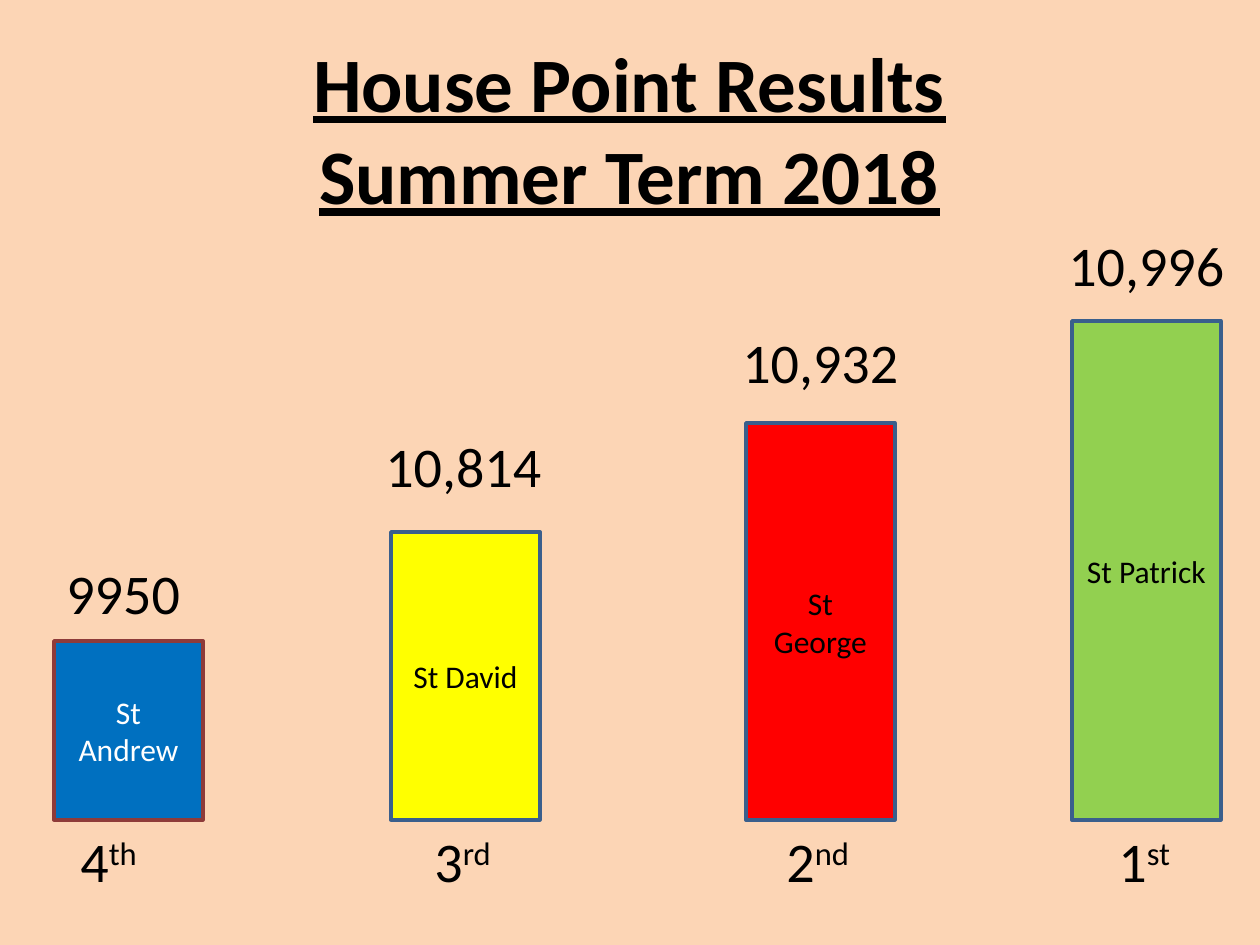
from pptx import Presentation
from pptx.dml.color import RGBColor
from pptx.enum.shapes import MSO_SHAPE
from pptx.enum.text import MSO_ANCHOR, MSO_AUTO_SIZE, PP_ALIGN
from pptx.util import Emu, Pt

PX = 914400 // 126
FONT = "Calibri"
BAR_WIDTH, BASELINE, LABEL_HEIGHT = 149, 820, 81

PEACH = RGBColor(0xFC, 0xD5, 0xB5)
BLACK = RGBColor(0x00, 0x00, 0x00)
WHITE = RGBColor(0xFF, 0xFF, 0xFF)
BLUE = RGBColor(0x00, 0x70, 0xC0)
YELLOW = RGBColor(0xFF, 0xFF, 0x00)
RED = RGBColor(0xFF, 0x00, 0x00)
GREEN = RGBColor(0x92, 0xD0, 0x50)
MAROON = RGBColor(0x8E, 0x3B, 0x39)
NAVY = RGBColor(0x3A, 0x5F, 0x8C)

# house, fill, line, text colour, bar (left, top), points, points (left, top, width), rank, suffix, rank (left, width)
HOUSES = [
    ("St Andrew", BLUE, MAROON, WHITE, (54, 641), "9950", (54, 552, 140), "4", "th", (68, 87)),
    ("St David", YELLOW, NAVY, BLACK, (391, 532), "10,814", (373, 425, 183), "3", "rd", (422, 87)),
    ("St George", RED, NAVY, BLACK, (746, 423), "10,932", (730, 321, 183), "2", "nd", (774, 95)),
    ("St Patrick", GREEN, NAVY, BLACK, (1072, 321), "10,996", (1056, 224, 183), "1", "st", (1106, 81)),
]


def px(*lengths):
    """Turn pixel lengths into EMU."""
    return [Emu(n * PX) for n in lengths]


def add_run(p, text, size, color=BLACK):
    """Append a formatted run to a paragraph."""
    r = p.add_run()
    r.text = text
    r.font.name = FONT
    r.font.size = Pt(size)
    r.font.color.rgb = color
    return r


def set_title(s, lines):
    """Place and fill the underlined slide title."""
    sp = s.shapes.title
    sp.left, sp.top, sp.width, sp.height = px(94, 26, 1071, 203)
    tf = sp.text_frame
    tf.vertical_anchor = MSO_ANCHOR.MIDDLE
    p = tf.paragraphs[0]
    p.alignment = PP_ALIGN.CENTER
    for i, line in enumerate(lines):
        if i:
            p.add_line_break()
        r = add_run(p, line, 44)
        r.font.bold = True
        r.font.underline = True


def add_label(s, left, top, width, text, suffix=""):
    """Add a large label with an optional superscript suffix."""
    tf = s.shapes.add_textbox(*px(left, top, width, LABEL_HEIGHT)).text_frame
    tf.word_wrap = False
    tf.auto_size = MSO_AUTO_SIZE.SHAPE_TO_FIT_TEXT
    p = tf.paragraphs[0]
    add_run(p, text, 32)
    if suffix:
        r = add_run(p, suffix, 32)
        r._r.get_or_add_rPr().set("baseline", "30000")


def add_bar(s, left, top, house, fill, line, color):
    """Add a house bar standing on the common baseline."""
    sp = s.shapes.add_shape(MSO_SHAPE.RECTANGLE, *px(left, top, BAR_WIDTH, BASELINE - top))
    sp.shadow.inherit = False
    sp.fill.solid()
    sp.fill.fore_color.rgb = fill
    sp.line.color.rgb = line
    sp.line.width = Pt(2)
    tf = sp.text_frame
    tf.word_wrap = True
    tf.vertical_anchor = MSO_ANCHOR.MIDDLE
    p = tf.paragraphs[0]
    p.alignment = PP_ALIGN.CENTER
    add_run(p, house, 18, color)


def main():
    """Build the house points slide."""
    prs = Presentation()
    prs.slide_width, prs.slide_height = px(1260, 945)
    s = prs.slides.add_slide(prs.slide_layouts[5])
    s.background.fill.solid()
    s.background.fill.fore_color.rgb = PEACH
    set_title(s, ["House Point Results", "Summer Term 2018"])
    for house, fill, line, color, bar, points, points_box, rank, suffix, rank_box in HOUSES:
        add_bar(s, *bar, house, fill, line, color)
        add_label(s, *points_box, points)
        rank_left, rank_width = rank_box
        add_label(s, rank_left, BASELINE, rank_width, rank, suffix)
    prs.save("out.pptx")


if __name__ == "__main__":
    main()
